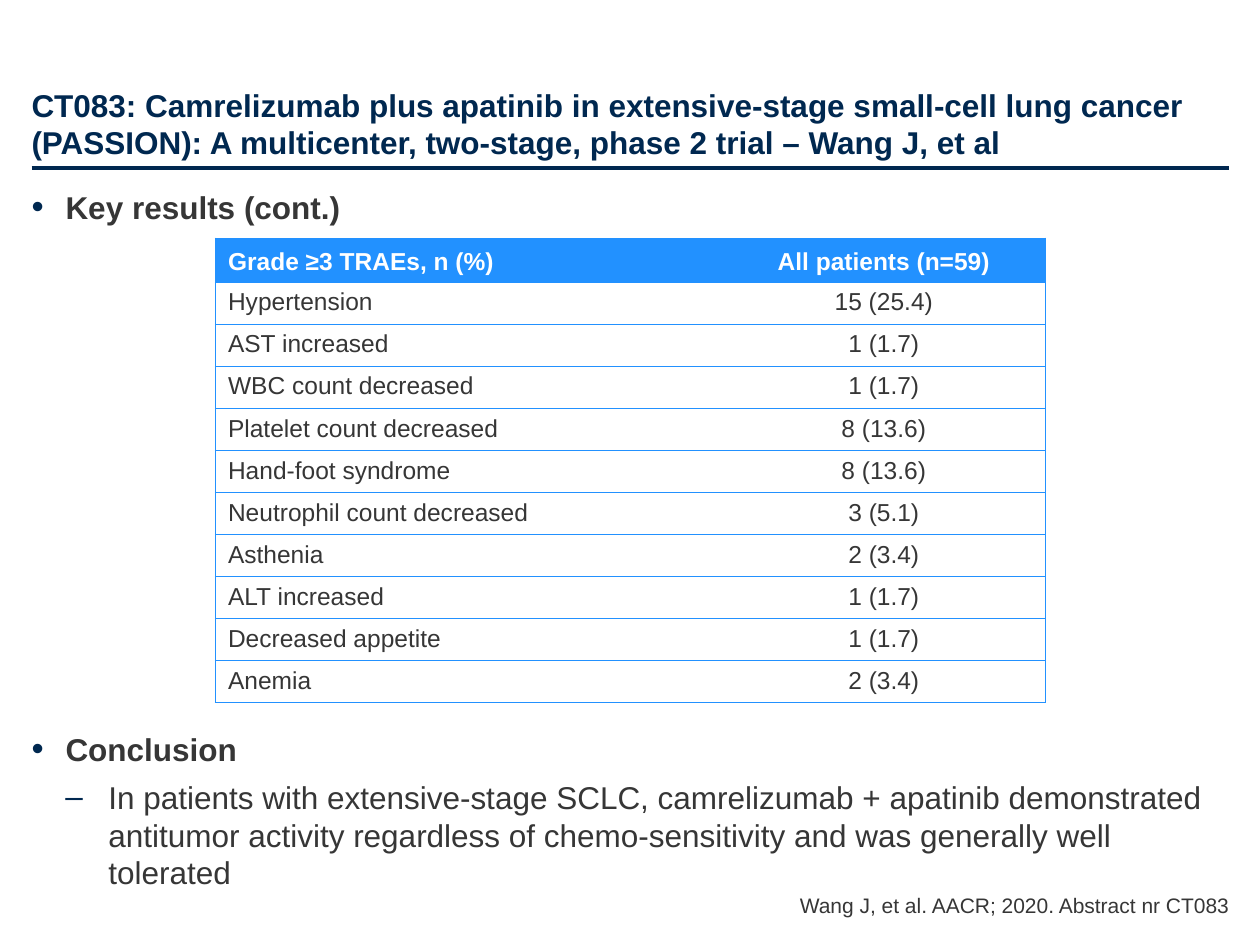
from lxml import etree
from pptx import Presentation
from pptx.dml.color import RGBColor
from pptx.enum.text import MSO_ANCHOR, MSO_AUTO_SIZE, PP_ALIGN
from pptx.oxml.ns import qn
from pptx.util import Inches, Pt

NAVY = RGBColor(0x00, 0x28, 0x50)
BLUE = RGBColor(0x22, 0x91, 0xFF)
GREY = RGBColor(0x36, 0x36, 0x36)
WHITE = RGBColor(0xFF, 0xFF, 0xFF)

TRAES = [
    ("Grade ≥3 TRAEs, n (%)", "All patients (n=59)"),
    ("Hypertension", "15 (25.4)"),
    ("AST increased", "1 (1.7)"),
    ("WBC count decreased", "1 (1.7)"),
    ("Platelet count decreased", "8 (13.6)"),
    ("Hand-foot syndrome", "8 (13.6)"),
    ("Neutrophil count decreased", "3 (5.1)"),
    ("Asthenia", "2 (3.4)"),
    ("ALT increased", "1 (1.7)"),
    ("Decreased appetite", "1 (1.7)"),
    ("Anemia", "2 (3.4)"),
]

# text, level, bold, space before, left indent, hanging indent, bullet, bullet size
BODY = [
    ("Key results (cont.)", 0, True, 0, 0.27, 0.27, "•", 110),
    ("Conclusion", 0, True, 282, 0.27, 0.27, "•", 110),
    ("In patients with extensive-stage SCLC, camrelizumab + apatinib demonstrated "
     "antitumor activity regardless of chemo-sensitivity and was generally well tolerated",
     1, False, 0, 0.61, 0.34, "–", 100),
]


def write(p, text, size, color, bold=False, align=PP_ALIGN.LEFT):
    p.alignment = align
    r = p.add_run()
    r.text = text
    for name, value in {"name": "Arial", "size": Pt(size), "bold": bold}.items():
        setattr(r.font, name, value)
    r.font.color.rgb = color


def place(s, left, top, width, height, anchor, wrap=True, inset_top=0, inset_bottom=0):
    """Position a text shape and return its formatted text frame."""
    s.left, s.top, s.width, s.height = map(Inches, (left, top, width, height))
    tf = s.text_frame
    frame = {
        "margin_left": 0, "margin_right": 0,
        "margin_top": Inches(inset_top), "margin_bottom": Inches(inset_bottom),
        "vertical_anchor": anchor, "word_wrap": wrap, "auto_size": MSO_AUTO_SIZE.NONE,
    }
    for name, value in frame.items():
        setattr(tf, name, value)
    return tf


prs = Presentation()
prs.slide_width, prs.slide_height = Inches(10), Inches(7.5)
slide = prs.slides.add_slide(prs.slide_layouts[1])

# Title and rule
tf = place(slide.shapes.title, 0.25, 0.25, 9.5, 1.03, MSO_ANCHOR.BOTTOM, inset_top=0.05)
write(tf.paragraphs[0],
      "CT083: Camrelizumab plus apatinib in extensive-stage small-cell lung cancer "
      "(PASSION): A multicenter, two-stage, phase 2 trial – Wang J, et al",
      18, NAVY, bold=True)

rule = slide.shapes.add_connector(1, Inches(0.25), Inches(1.33), Inches(9.75), Inches(1.33))
rule.line.color.rgb = NAVY
rule.line.width = Pt(2.25)
etree.SubElement(rule._element.spPr, qn("a:effectLst"))

# Bulleted body
tf = place(slide.placeholders[1], 0.25, 1.44, 9.5, 5.81, MSO_ANCHOR.TOP,
           inset_top=0.05, inset_bottom=0.05)
for i, (text, level, bold, before, left, hang, bullet, bullet_size) in enumerate(BODY):
    p = tf.add_paragraph() if i else tf.paragraphs[0]
    p.level = level
    p.space_before, p.space_after = Pt(before), Pt(6)
    write(p, text, 18, GREY, bold)
    pPr = p._p.get_or_add_pPr()
    pPr.set("marL", str(Inches(left)))
    pPr.set("indent", str(-Inches(hang)))
    bullet_color = etree.SubElement(pPr, qn("a:buClr"))
    etree.SubElement(bullet_color, qn("a:srgbClr"), val=str(NAVY))
    etree.SubElement(pPr, qn("a:buSzPct"), val=str(bullet_size * 1000))
    etree.SubElement(pPr, qn("a:buFont"), typeface="Arial")
    etree.SubElement(pPr, qn("a:buChar"), char=bullet)

# Citation
s = slide.shapes.add_textbox(0, 0, 0, 0)
tf = place(s, 6.32, 7.08, 3.44, 0.2, MSO_ANCHOR.BOTTOM, wrap=False)
tf.auto_size = MSO_AUTO_SIZE.SHAPE_TO_FIT_TEXT
write(tf.paragraphs[0], "Wang J, et al. AACR; 2020. Abstract nr CT083", 12, GREY,
      align=PP_ALIGN.RIGHT)

# Adverse events table
table = slide.shapes.add_table(len(TRAES), 2, Inches(1.71), Inches(1.89),
                               Inches(6.59), Inches(3.7)).table
table.horz_banding = False
for col, width in zip(table.columns, (4.02, 2.57)):
    col.width = Inches(width)
for i, values in enumerate(TRAES):
    header = i == 0
    table.rows[i].height = Inches(0.35 if header else 0.33)
    for j, text in enumerate(values):
        cell = table.cell(i, j)
        cell.vertical_anchor = MSO_ANCHOR.BOTTOM if header else MSO_ANCHOR.TOP
        write(cell.text_frame.paragraphs[0], text, 14, WHITE if header else GREY,
              header, PP_ALIGN.CENTER if j else PP_ALIGN.LEFT)
        tcPr = cell._tc.get_or_add_tcPr()
        inner_edge = "lnL" if j else "lnR"
        for edge in ("lnL", "lnR", "lnT", "lnB"):
            ln = etree.SubElement(tcPr, qn(f"a:{edge}"), w=str(Pt(0.75)))
            if edge == inner_edge:
                etree.SubElement(ln, qn("a:noFill"))
            else:
                fill = etree.SubElement(ln, qn("a:solidFill"))
                etree.SubElement(fill, qn("a:srgbClr"), val=str(BLUE))
        cell.fill.solid()
        cell.fill.fore_color.rgb = BLUE if header else WHITE

prs.save("out.pptx")
